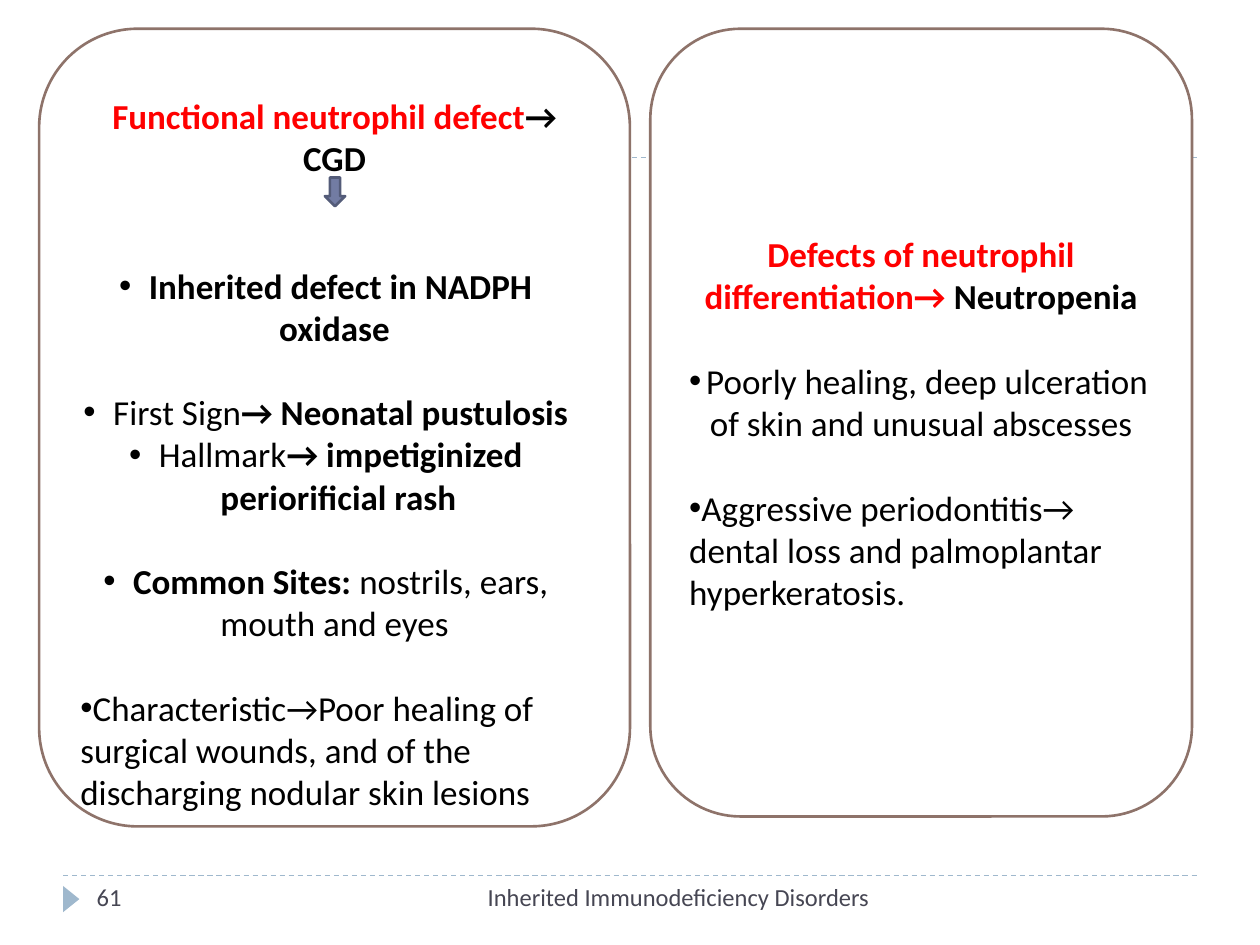
import pptx
import pptx.util
import pptx.dml.color
import pptx.enum.dml
import pptx.enum.shapes
import pptx.enum.text
import pptx.oxml.ns
import lxml.etree

Cm = pptx.util.Cm
Pt = pptx.util.Pt
Kind = pptx.enum.shapes.MSO_SHAPE
Align = pptx.enum.text.PP_ALIGN
Anchor = pptx.enum.text.MSO_ANCHOR
COLORS = {"rule": "9FB8CD", "footer": "464653", "panel": "FFFFFF", "border": "8E736A",
          "arrow": "727CA3", "arrow_line": "545C79", "red": "FF0000", "black": "000000"}
LINE_HEIGHT = 24.4


def rgb(name):
    return pptx.dml.color.RGBColor.from_string(COLORS[name])


def add_filled_shape(kind, box, fill, line=None):
    shape = slide.shapes.add_shape(kind, *[Cm(length) for length in box])
    shape.shadow.inherit = False
    shape.fill.solid()
    shape.fill.fore_color.rgb = rgb(fill)
    if line:
        shape.line.color.rgb = rgb(line)
        shape.line.width = Pt(1.5)
    else:
        shape.line.fill.background()
    return shape


presentation = pptx.Presentation()
presentation.slide_width = Cm(25.4)
presentation.slide_height = Cm(19.05)
slide = presentation.slides.add_slide(presentation.slide_layouts[6])

for top in (17.65, 3.18):
    rule = slide.shapes.add_connector(
        pptx.enum.shapes.MSO_CONNECTOR.STRAIGHT, Cm(1.27), Cm(top), Cm(24.13), Cm(top))
    rule.line.color.rgb = rgb("rule")
    rule.line.width = Pt(0.75)
    rule.line.dash_style = pptx.enum.dml.MSO_LINE.DASH
    lxml.etree.SubElement(rule._element.spPr, pptx.oxml.ns.qn("a:effectLst"))

marker = add_filled_shape(Kind.ISOSCELES_TRIANGLE, (1.17, 17.96, 0.53, 0.33), "rule")
marker.rotation = 90

for text, left, width, alignment in (
        ("Inherited Immunodeficiency Disorders", 8.05, 9.73, Align.RIGHT),
        ("61", 1.7, 5.51, Align.LEFT)):
    footer = slide.shapes.add_textbox(Cm(left), Cm(17.65), Cm(width), Cm(1.02))
    footer.text_frame.word_wrap = True
    footer.text_frame.text = text
    paragraph = footer.text_frame.paragraphs[0]
    paragraph.alignment = alignment
    paragraph.runs[0].font.name = "Calibri"
    paragraph.runs[0].font.size = Pt(14)
    paragraph.runs[0].font.color.rgb = rgb("footer")

# Each paragraph: alignment, bullet, empty lines above, runs of (text, bold, color)
panels = [
    ((0.79, 0.58, 11.91, 16.08), Anchor.TOP, 0.75, [
        (Align.CENTER, False, 0, [("Functional neutrophil defect", True, "red"),
                                  ("→ CGD", True, "black")]),
        (Align.CENTER, True, 2, [("Inherited defect in NADPH oxidase", True, "black")]),
        (Align.CENTER, True, 1, [("First Sign", False, "black"),
                                 ("→ Neonatal pustulosis", True, "black")]),
        (Align.CENTER, True, 0, [("Hallmark", False, "black"),
                                 ("→ impetiginized", True, "black")]),
        (Align.CENTER, False, 0, [(" periorificial rash", True, "black")]),
        (Align.CENTER, True, 1, [("Common Sites: ", True, "black"),
                                 ("nostrils, ears, mouth and eyes", False, "black")]),
        (Align.LEFT, True, 1, [("Characteristic→Poor healing of surgical wounds, and of the "
                                "discharging nodular skin lesions", False, "black")]),
    ]),
    ((13.11, 0.58, 10.92, 15.88), Anchor.MIDDLE, 0.13, [
        (Align.CENTER, False, 0, [("Defects of neutrophil differentiation→ ", True, "red"),
                                  ("Neutropenia", True, "black")]),
        (Align.CENTER, True, 1, [("Poorly healing, deep ulceration of skin and unusual abscesses",
                                  False, "black")]),
        (Align.LEFT, True, 1, [("Aggressive periodontitis→", False, "black")]),
        (Align.LEFT, False, 0, [("dental loss and palmoplantar hyperkeratosis.", False, "black")]),
    ]),
]

for box, anchor, margin_top, paragraphs in panels:
    panel = add_filled_shape(Kind.ROUNDED_RECTANGLE, box, "panel", "border")
    text_frame = panel.text_frame
    text_frame.word_wrap = True
    text_frame.vertical_anchor = anchor
    text_frame.margin_top = Cm(margin_top)
    for index, (alignment, bullet, gap, runs) in enumerate(paragraphs):
        paragraph = text_frame.add_paragraph() if index else text_frame.paragraphs[0]
        paragraph.alignment = alignment
        paragraph.space_before = Pt(round(gap * LINE_HEIGHT, 1))
        if bullet:
            properties = paragraph._p.get_or_add_pPr()
            font = lxml.etree.SubElement(properties, pptx.oxml.ns.qn("a:buFont"))
            font.set("typeface", "Arial")
            character = lxml.etree.SubElement(properties, pptx.oxml.ns.qn("a:buChar"))
            character.set("char", "•")
        for text, bold, color in runs:
            run = paragraph.add_run()
            run.text = text
            run.font.name = "Calibri"
            run.font.size = Pt(20)
            run.font.bold = bold
            run.font.color.rgb = rgb(color)

add_filled_shape(Kind.DOWN_ARROW, (6.55, 3.58, 0.41, 0.58), "arrow", "arrow_line")

presentation.save("out.pptx")
